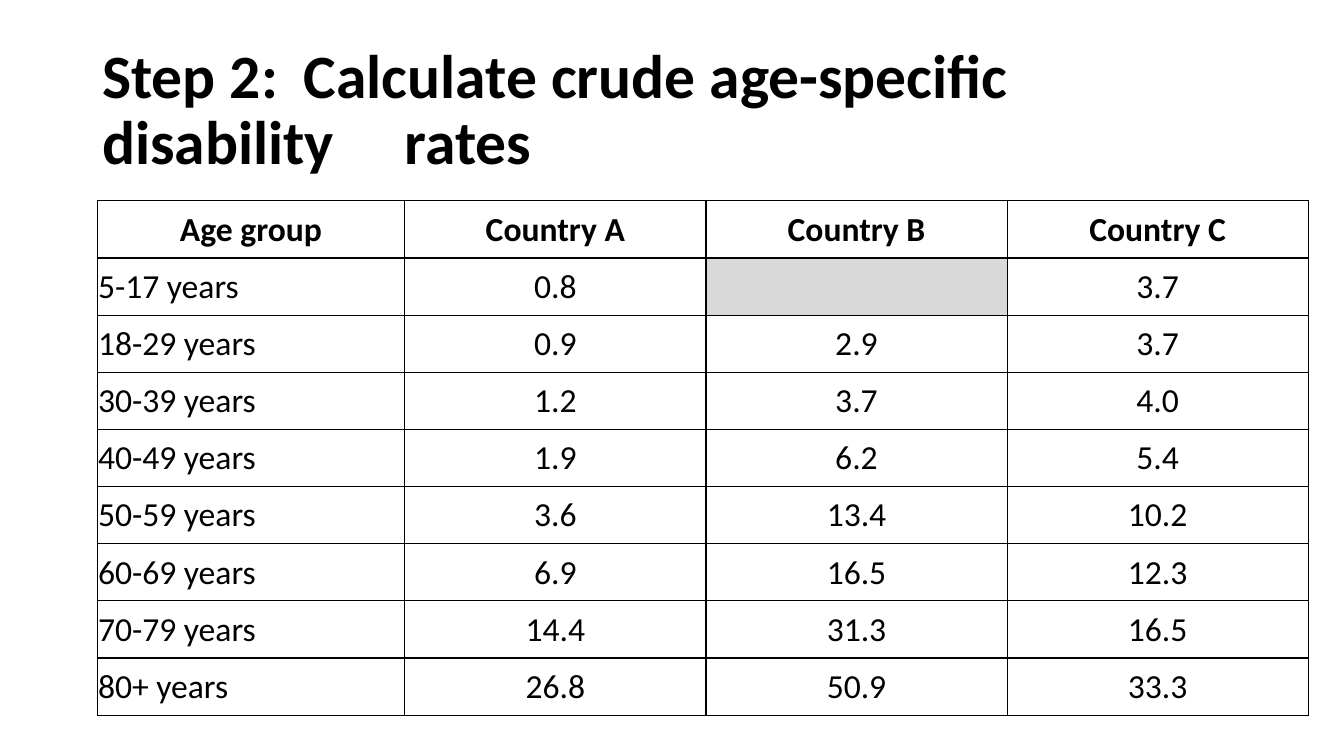
from lxml.etree import SubElement as Sub
from pptx import Presentation
from pptx.dml.color import RGBColor
from pptx.enum.text import MSO_ANCHOR as Anchor, PP_ALIGN as Align
from pptx.oxml.ns import qn
from pptx.util import Cm, Pt

BLACK = RGBColor(0x00, 0x00, 0x00)
WHITE = RGBColor(0xFF, 0xFF, 0xFF)
GREY = RGBColor(0xD9, 0xD9, 0xD9)

TITLE = "Step 2:\tCalculate crude age-specific disability \t\trates"
HEADS = ["Age group", "Country A", "Country B", "Country C"]
RATES = [
    ("5-17 years", 0.8, None, 3.7),
    ("18-29 years", 0.9, 2.9, 3.7),
    ("30-39 years", 1.2, 3.7, 4.0),
    ("40-49 years", 1.9, 6.2, 5.4),
    ("50-59 years", 3.6, 13.4, 10.2),
    ("60-69 years", 6.9, 16.5, 12.3),
    ("70-79 years", 14.4, 31.3, 16.5),
    ("80+ years", 26.8, 50.9, 33.3),
]


class Deck:
    """Hold the style and the current slide, and add elements to it."""

    font = "Calibri"
    big = Pt(44)
    small = Pt(24)
    rule = Pt(1)
    pad = Cm(0.02)

    def __init__(self, slide):
        self.slide = slide

    def label(self, frame, text, size, bold, align):
        frame.text = text
        para = frame.paragraphs[0]
        para.alignment = align
        for run in para.runs:
            font = run.font
            font.name, font.size, font.bold = self.font, size, bold
            font.color.rgb = BLACK
        return para

    def title(self, text, left, top, width, height):
        box = self.slide.shapes.add_textbox(left, top, width, height)
        frame = box.text_frame
        frame.word_wrap = True
        frame.vertical_anchor = Anchor.MIDDLE
        para = self.label(frame, text, self.big, True, Align.LEFT)
        para.line_spacing = 0.9

    def border(self, cell):
        props = cell._tc.get_or_add_tcPr()
        for side in ("lnL", "lnR", "lnT", "lnB"):
            line = Sub(props, qn(f"a:{side}"), w=str(self.rule))
            fill = Sub(line, qn("a:solidFill"))
            Sub(fill, qn("a:srgbClr"), val=str(BLACK))

    def cell(self, cell, value, bold, align):
        cell.margin_left = cell.margin_top = cell.margin_right = self.pad
        cell.margin_bottom = 0
        cell.vertical_anchor = Anchor.MIDDLE
        self.border(cell)
        cell.fill.solid()
        cell.fill.fore_color.rgb = GREY if value is None else WHITE
        if value is not None:
            text = value if isinstance(value, str) else f"{value:.1f}"
            self.label(cell.text_frame, text, self.small, bold, align)

    def table(self, rows, left, top, widths, height):
        shape = self.slide.shapes.add_table(
            len(rows), len(widths), left, top, sum(widths), height * len(rows))
        table = shape.table
        table.first_row = table.horz_banding = False
        for col, width in zip(table.columns, widths):
            col.width = width
        for r, row in enumerate(rows):
            table.rows[r].height = height
            for c, value in enumerate(row):
                align = Align.LEFT if r and not c else Align.CENTER
                self.cell(table.cell(r, c), value, r == 0, align)


def main():
    show = Presentation()
    show.slide_width, show.slide_height = Cm(33.87), Cm(19.05)
    deck = Deck(show.slides.add_slide(show.slide_layouts[6]))
    deck.title(TITLE, Cm(2.33), Cm(0.97), Cm(29.21), Cm(3.68))
    widths = [Cm(7.75)] + [Cm(7.59)] * 3
    deck.table([HEADS] + RATES, Cm(2.45), Cm(5.06), widths, Cm(1.44))
    show.save("out.pptx")


if __name__ == "__main__":
    main()
